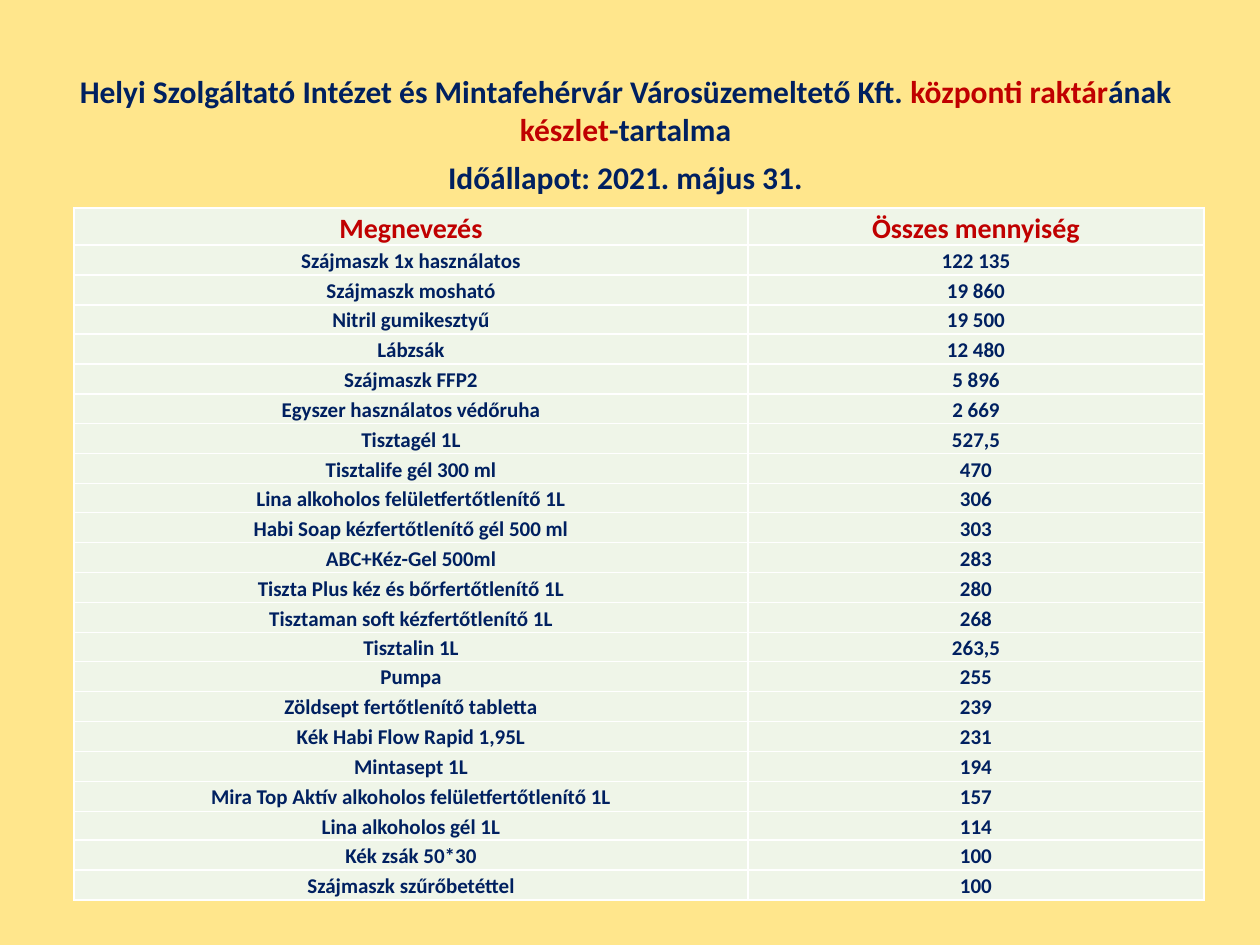
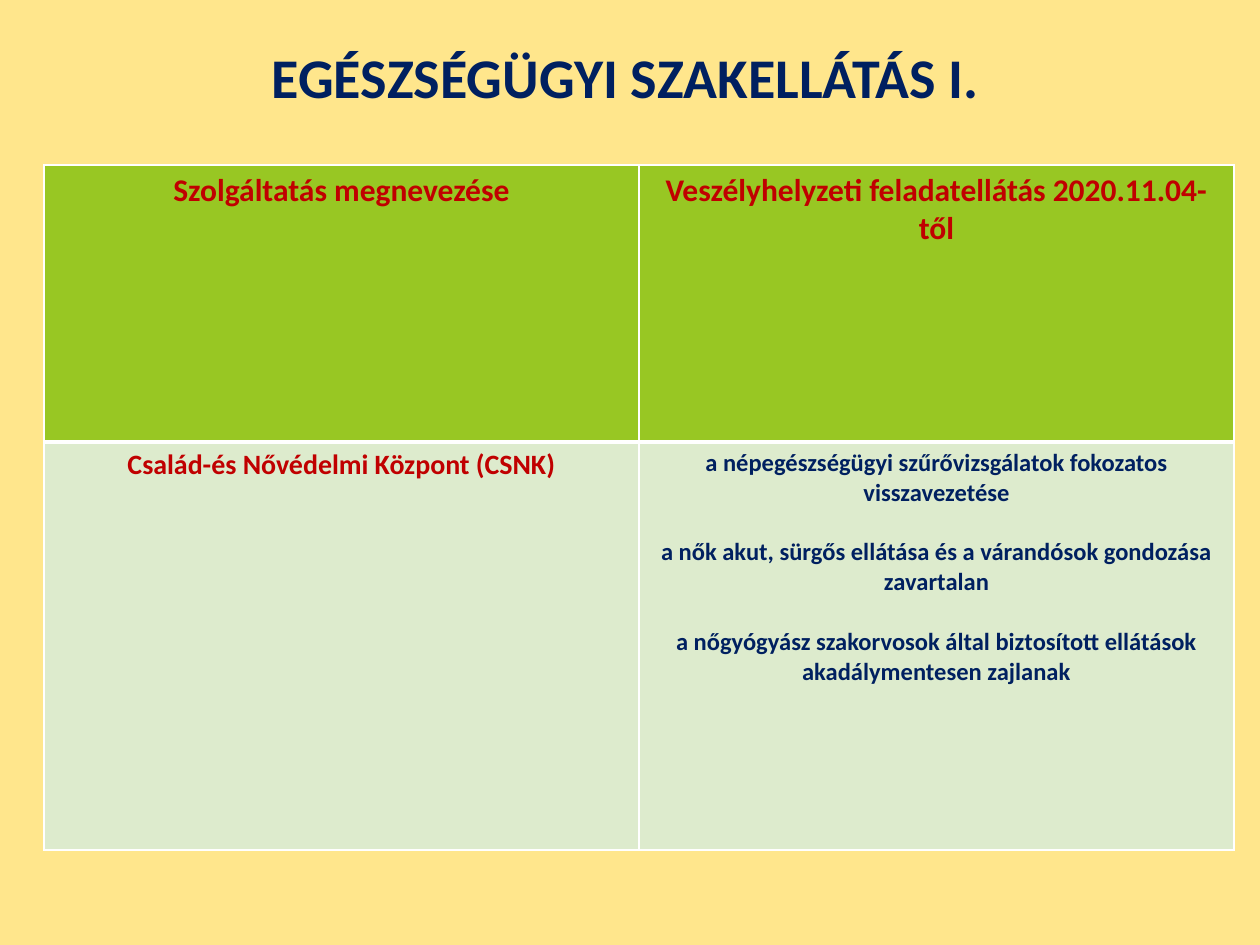
import pptx
import pptx.dml.color
import pptx.enum.text
import pptx.oxml
import pptx.oxml.ns
import pptx.util

EMU_PER_PX = 914400 / 126
FONT = "Calibri"
NAVY, RED, WHITE = "002060", "C00000", "FFFFFF"
SAND, GREEN, PALE, MIST = "FFE68C", "98C723", "DDEBCD", "EFF5E8"
CENTER = pptx.enum.text.PP_ALIGN.CENTER
ANCHOR = pptx.enum.text.MSO_ANCHOR


def px(n):
    return pptx.util.Emu(round(n * EMU_PER_PX))


def rgb(value):
    return pptx.dml.color.RGBColor.from_string(value)


prs = pptx.Presentation()
prs.slide_width, prs.slide_height = px(1260), px(945)

# Shared frame: background and a heading box on each slide
slides, headings = [], []
for top, height, anchor in [(66, 130, ANCHOR.TOP), (21, 95, ANCHOR.BOTTOM)]:
    s = prs.slides.add_slide(prs.slide_layouts[6])
    s.background.fill.solid()
    s.background.fill.fore_color.rgb = rgb(SAND)
    tf = s.shapes.add_textbox(px(54), px(top), px(1143), px(height)).text_frame
    tf.word_wrap = True
    tf.vertical_anchor = anchor
    slides.append(s)
    headings.append(tf)

# Heading of the stock slide
tf = headings[0]
p = tf.paragraphs[0]
for text, color in [
    ("Helyi Szolgáltató Intézet és Mintafehérvár Városüzemeltető Kft. ", NAVY),
    ("központi raktár", RED),
    ("ának ", NAVY),
    ("készlet", RED),
    ("-tartalma", NAVY),
]:
    r = p.add_run()
    r.text = text
    r.font.color.rgb = rgb(color)
p = tf.add_paragraph()
p.text = "Időállapot: 2021. május 31."
p.space_before = pptx.util.Pt(6)
p.font.color.rgb = rgb(NAVY)

# Heading of the care slide
p = headings[1].paragraphs[0]
p.text = "EGÉSZSÉGÜGYI SZAKELLÁTÁS I."
p.font.color.rgb = rgb(NAVY)

for tf, size in zip(headings, (18, 32)):
    for p in tf.paragraphs:
        p.alignment = CENTER
        p.font.name, p.font.size, p.font.bold = FONT, pptx.util.Pt(size), True

# Table contents
stock = [
    ("Megnevezés", "Összes mennyiség"),
    ("Szájmaszk 1x használatos", "122 135"),
    ("Szájmaszk mosható", "19 860"),
    ("Nitril gumikesztyű", "19 500"),
    ("Lábzsák", "12 480"),
    ("Szájmaszk FFP2", "5 896"),
    ("Egyszer használatos védőruha", "2 669"),
    ("Tisztagél 1L", "527,5"),
    ("Tisztalife gél 300 ml", "470"),
    ("Lina alkoholos felületfertőtlenítő 1L", "306"),
    ("Habi Soap kézfertőtlenítő gél 500 ml", "303"),
    ("ABC+Kéz-Gel 500ml", "283"),
    ("Tiszta Plus kéz és bőrfertőtlenítő 1L", "280"),
    ("Tisztaman soft kézfertőtlenítő 1L", "268"),
    ("Tisztalin 1L", "263,5"),
    ("Pumpa", "255"),
    ("Zöldsept fertőtlenítő tabletta", "239"),
    ("Kék Habi Flow Rapid 1,95L", "231"),
    ("Mintasept 1L", "194"),
    ("Mira Top Aktív alkoholos felületfertőtlenítő 1L", "157"),
    ("Lina alkoholos gél 1L", "114"),
    ("Kék zsák 50*30", "100"),
    ("Szájmaszk szűrőbetéttel", "100"),
]
care = [
    ("Szolgáltatás megnevezése", "Veszélyhelyzeti feladatellátás 2020.11.04-től"),
    (
        "Család-és Nővédelmi Központ (CSNK)",
        "a népegészségügyi szűrővizsgálatok fokozatos visszavezetése\n"
        "a nők akut, sürgős ellátása és a várandósok gondozása zavartalan\n"
        "a nőgyógyász szakorvosok által biztosított ellátások akadálymentesen zajlanak",
    ),
]

# Item rows share 656 px below the stock header
items = len(stock) - 1
edges = [round(656 * i / items) for i in range(items + 1)]
stock_heights = [37] + [b - a for a, b in zip(edges, edges[1:])]

# Both tables: slide, rows, left, top, column widths, row heights
tables = []
for s, rows, left, top, widths, heights in [
    (slides[0], stock, 74, 208, (674, 456), stock_heights),
    (slides[1], care, 44, 165, (595, 595), (277, 408)),
]:
    table = s.shapes.add_table(
        len(rows), 2, px(left), px(top), px(sum(widths)), px(sum(heights))
    ).table
    table.first_row = table.horz_banding = False
    for column, width in zip(table.columns, widths):
        column.width = px(width)
    for row, height in zip(table.rows, heights):
        row.height = px(height)

    for i, row in enumerate(rows):
        for j, text in enumerate(row):
            cell = table.cell(i, j)
            cell.text = text
            if rows is stock:
                fill, size = MIST, 12 if i else 16
                color = NAVY if i else RED
                cell.vertical_anchor = ANCHOR.MIDDLE
                cell.margin_left = cell.margin_right = cell.margin_top = px(1)
                cell.margin_bottom = 0
            else:
                fill = PALE if i else GREEN
                size = 18 if i == 0 else (16, 14)[j]
                color = NAVY if i and j else RED

            for k, p in enumerate(cell.text_frame.paragraphs):
                p.alignment = CENTER
                p.font.name, p.font.size, p.font.bold = FONT, pptx.util.Pt(size), True
                p.font.color.rgb = rgb(color)
                if rows is stock:
                    p.line_spacing = 1.07
                    p.space_after = pptx.util.Pt(8)
                elif k:
                    p.space_before = pptx.util.Pt(17)

            # White borders, thick between the care header and its body
            tcPr = cell._tc.get_or_add_tcPr()
            for side in ("lnL", "lnR", "lnT", "lnB"):
                header_rule = rows is care and (side, i) in (("lnB", 0), ("lnT", 1))
                tcPr.append(pptx.oxml.parse_xml(
                    f'<a:{side} {pptx.oxml.ns.nsdecls("a")} w="{38100 if header_rule else 12700}">'
                    f'<a:solidFill><a:srgbClr val="{WHITE}"/></a:solidFill></a:{side}>'
                ))
            cell.fill.solid()
            cell.fill.fore_color.rgb = rgb(fill)

prs.save("out.pptx")
